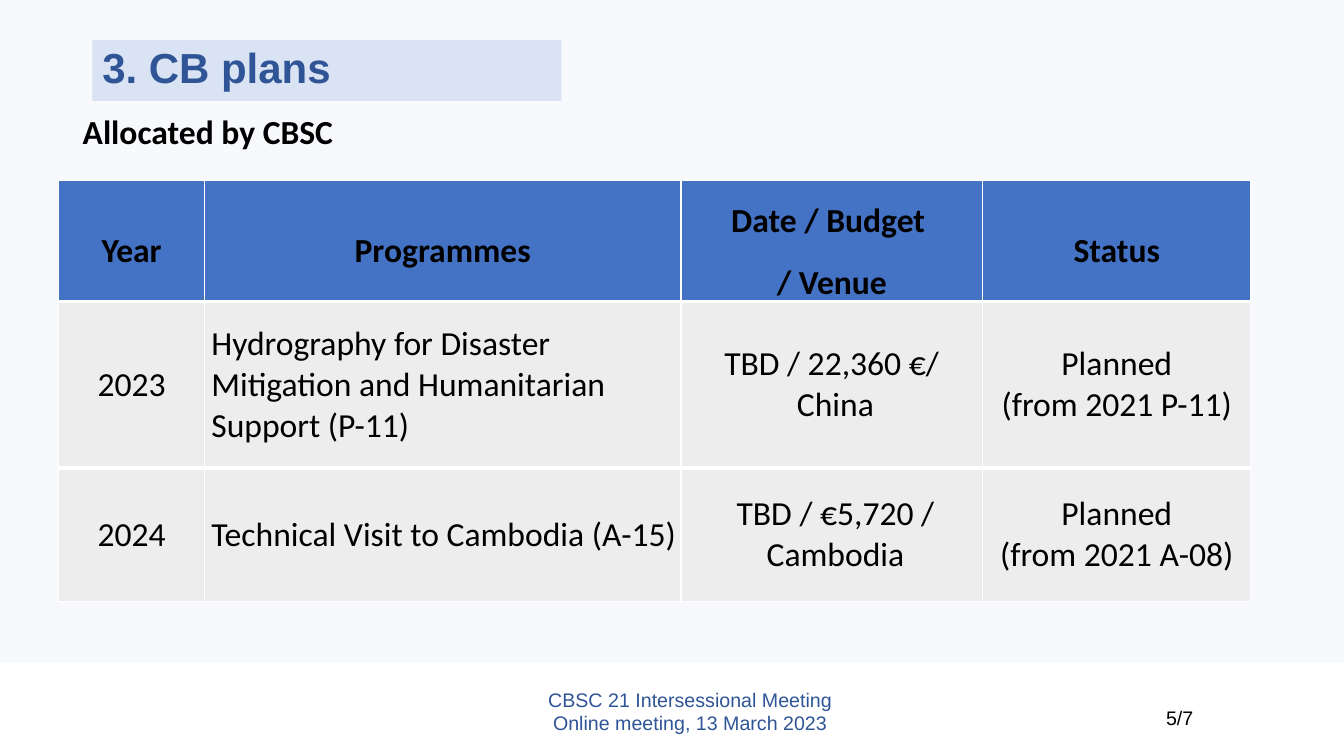
from lxml import etree
from pptx import Presentation
from pptx.dml.color import RGBColor
from pptx.enum import shapes, text
from pptx.oxml import ns
from pptx.util import Pt

# Content
TITLE = "3. CB plans"
SUBTITLE = "Allocated by CBSC"
FOOTER = "CBSC 21 Intersessional Meeting\vOnline meeting, 13 March 2023"
PAGE = "5/7"
HEADER = ["Year", "Programmes", "Date / Budget \n/ Venue", "Status"]
PLANS = [
    ["2023", "Hydrography for Disaster Mitigation and Humanitarian Support (P-11)",
     "TBD / 22,360 €/ \nChina", "Planned\n(from 2021 P-11)"],
    ["2024", "Technical Visit to Cambodia (A-15)",
     "TBD / €5,720 /\nCambodia", "Planned\n(from 2021 A-08)"],
]
COLUMN_WIDTHS = [104, 340.5, 215.5, 191.5]
ROW_HEIGHTS = [71.5, 119, 95]
COLUMN_INDENTS = [0, 5, 5, 0]

THEME = {
    "heading": "Arial", "body": "Calibri",
    "navy": "2F5597", "pale": "DAE3F3", "blue": "4472C4",
    "grey": "EDEDED", "white": "FFFFFF", "black": "000000",
    "title_size": 30, "body_size": 24, "footer_size": 14,
}
LEFT, CENTER, RIGHT = text.PP_ALIGN.LEFT, text.PP_ALIGN.CENTER, text.PP_ALIGN.RIGHT
MIDDLE, TOP = text.MSO_ANCHOR.MIDDLE, text.MSO_ANCHOR.TOP


def color(name):
    return RGBColor.from_string(THEME[name])


def write(frame, content, *, font="body", size="body_size", ink="black",
          bold=False, align=LEFT, anchor=TOP, spacing=None, wrap=True):
    frame.text = content
    frame.word_wrap = wrap
    frame.vertical_anchor = anchor
    for paragraph in frame.paragraphs:
        paragraph.alignment = align
        paragraph.line_spacing = spacing
        for run in paragraph.runs:
            run.font.name = THEME[font]
            run.font.size = Pt(THEME[size])
            run.font.bold = bold
            run.font.color.rgb = color(ink)


def add_panel(slide, left, top, width, height, alpha=None):
    shape = slide.shapes.add_shape(shapes.MSO_SHAPE.RECTANGLE,
                                   Pt(left), Pt(top), Pt(width), Pt(height))
    shape.shadow.inherit = False
    shape.line.fill.background()
    shape.fill.solid()
    shape.fill.fore_color.rgb = color("pale")
    if alpha:
        fill_color = shape.fill._xPr.find(ns.qn("a:solidFill"))[0]
        etree.SubElement(fill_color, ns.qn("a:alpha"), val=str(alpha * 1000))
    return shape


def add_text(slide, left, top, width, height, content, **style):
    box = slide.shapes.add_textbox(Pt(left), Pt(top), Pt(width), Pt(height))
    write(box.text_frame, content, **style)


def add_borders(cell, widths):
    properties = cell._tc.get_or_add_tcPr()
    for side, width in widths.items():
        line = etree.SubElement(properties, ns.qn("a:ln" + side), w=str(Pt(width)))
        fill = etree.SubElement(line, ns.qn("a:solidFill"))
        etree.SubElement(fill, ns.qn("a:srgbClr"), val=THEME["white"])


def add_plans_table(slide, left, top):
    rows = [HEADER] + PLANS
    last = len(rows) - 1
    table = slide.shapes.add_table(
        len(rows), len(HEADER), Pt(left), Pt(top),
        Pt(sum(COLUMN_WIDTHS)), Pt(sum(ROW_HEIGHTS))).table
    table.horz_banding = False
    for column, width in zip(table.columns, COLUMN_WIDTHS):
        column.width = Pt(width)
    for row, height in zip(table.rows, ROW_HEIGHTS):
        row.height = Pt(height)
    for r, values in enumerate(rows):
        header = r == 0
        for c, value in enumerate(values):
            cell = table.cell(r, c)
            # Thick rules between rows, thin ones elsewhere
            add_borders(cell, {"L": 1, "R": 1, "T": 1 if header else 3,
                               "B": 1 if r == last else 3})
            cell.fill.solid()
            cell.fill.fore_color.rgb = color("blue" if header else "grey")
            cell.margin_left = Pt(0 if header else COLUMN_INDENTS[c])
            cell.margin_right = cell.margin_top = cell.margin_bottom = 0
            cell.vertical_anchor = MIDDLE
            write(cell.text_frame, value, bold=header, anchor=None,
                  align=LEFT if c == 1 and not header else CENTER,
                  spacing=1.5 if header else None)


def main():
    presentation = Presentation()
    presentation.slide_width, presentation.slide_height = Pt(960), Pt(540)
    slide = presentation.slides.add_slide(presentation.slide_layouts[6])

    # Footer and backdrop
    add_text(slide, 331, 487.5, 324, 41, FOOTER, font="heading",
             size="footer_size", ink="navy", align=CENTER, anchor=MIDDLE)
    add_panel(slide, 0, 0, 960, 473.5, alpha=21)

    # Headings
    title = add_panel(slide, 66, 28.5, 335, 43.5)
    write(title.text_frame, TITLE, font="heading", size="title_size",
          ink="navy", bold=True, anchor=MIDDLE, spacing=0.9)
    add_text(slide, 745, 500.5, 114.5, 29, PAGE, font="heading",
             size="footer_size", align=RIGHT)
    add_text(slide, 52, 75.5, 195, 36, SUBTITLE, bold=True, wrap=False)

    # Plans
    add_plans_table(slide, 42, 129)
    presentation.save("out.pptx")


if __name__ == "__main__":
    main()
